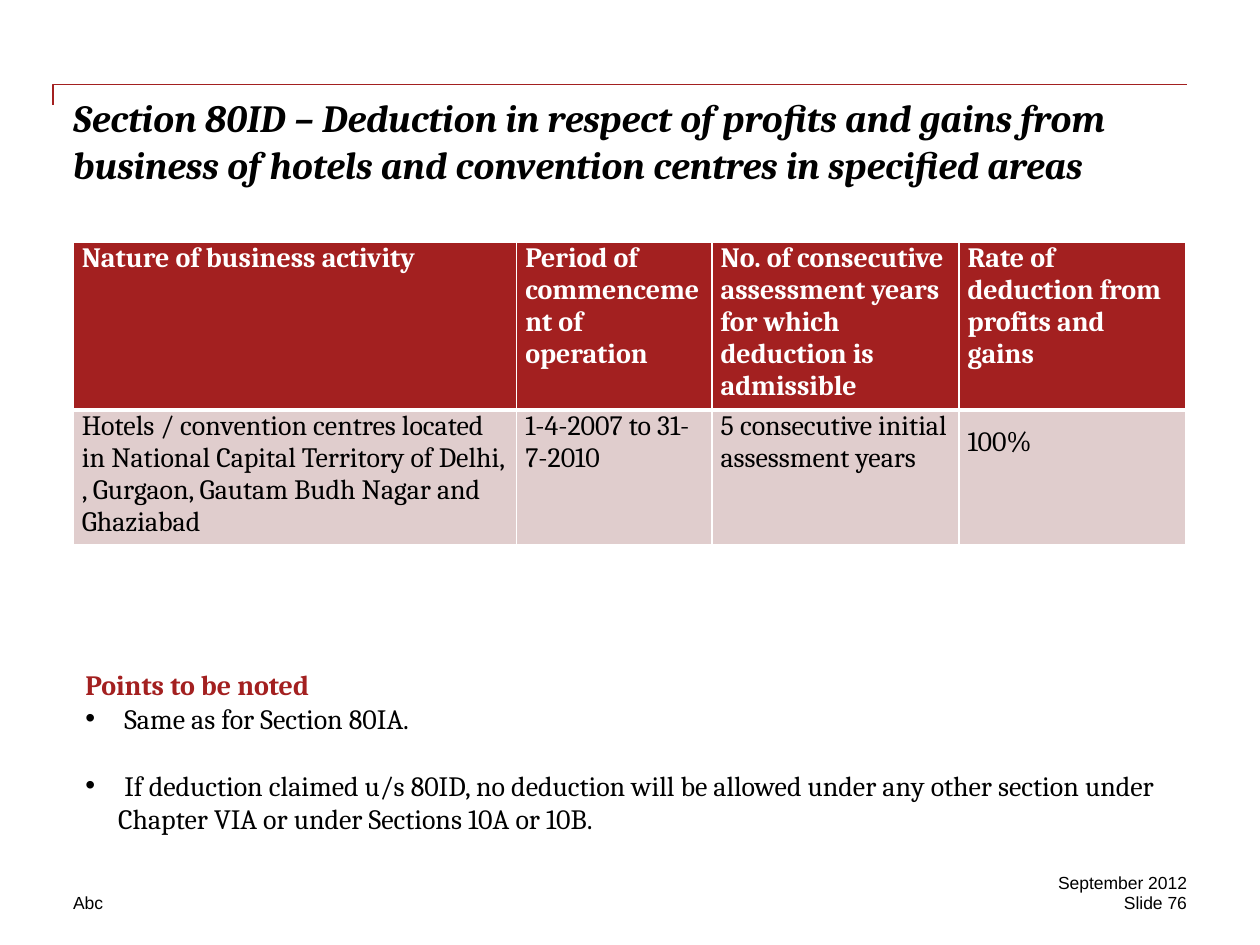
import pptx
import pptx.dml.color
import pptx.enum.text
import pptx.oxml
import pptx.oxml.ns
import pptx.util
from pptx.util import Inches

RED, PINK, BLACK, WHITE = "A32020", "E0CDCD", "000000", "FFFFFF"
RIGHT = pptx.enum.text.PP_ALIGN.RIGHT


def color(value):
    return pptx.dml.color.RGBColor.from_string(value)


def write(paragraph, text, size=16, font="Cambria", fill=BLACK, bold=False,
          italic=False, align=None):
    run = paragraph.add_run()
    run.text = text
    run.font.size = pptx.util.Pt(size)
    run.font.name = font
    run.font.bold = bold
    run.font.italic = italic
    run.font.color.rgb = color(fill)
    if align is not None:
        paragraph.alignment = align


presentation = pptx.Presentation()
presentation.slide_width = Inches(10)
presentation.slide_height = Inches(7.5)
slide = presentation.slides.add_slide(presentation.slide_layouts[6])

# Rule above the title with a short drop at its left end
builder = slide.shapes.build_freeform(Inches(0.42), Inches(0.83))
builder.add_line_segments(
    [(Inches(0.42), Inches(0.67)), (Inches(9.42), Inches(0.67))], close=False)
rule = builder.convert_to_shape()
rule.shadow.inherit = False
rule.fill.background()
rule.line.color.rgb = color(RED)
rule.line.width = pptx.util.Pt(1)

# Title and footer texts
title = ("Section 80ID – Deduction in respect of profits and gains from "
         "business of hotels and convention centres in specified areas")
footer = {"size": 10, "font": "Arial"}
labels = [
    (title, 0.58, 0.75, 8.83, 1, {"size": 22, "bold": True, "italic": True}),
    ("Abc", 0.58, 7.08, 2.83, 0.17, footer),
    ("September 2012", 7.75, 6.92, 1.67, 0.17, {**footer, "align": RIGHT}),
    ("Slide 76", 7.75, 7.08, 1.67, 0.17, {**footer, "align": RIGHT}),
]
for text, left, top, width, height, style in labels:
    box = slide.shapes.add_textbox(
        Inches(left), Inches(top), Inches(width), Inches(height))
    frame = box.text_frame
    frame.word_wrap = True
    frame.margin_left = frame.margin_right = 0
    frame.margin_top = frame.margin_bottom = 0
    write(frame.paragraphs[0], text, **style)

# Deduction table
rows = [
    ["Nature of business activity",
     "Period of commencement of operation",
     "No. of consecutive assessment years for which deduction is admissible",
     "Rate of deduction from profits and gains"],
    ["Hotels / convention centres located in National Capital Territory of "
     "Delhi, , Gurgaon, Gautam Budh Nagar and Ghaziabad",
     "1-4-2007 to 31-7-2010",
     "5 consecutive initial assessment years",
     "100%"],
]
table = slide.shapes.add_table(
    2, 4, Inches(0.58), Inches(1.92), Inches(8.83), Inches(2.29)).table
for column, width in zip(table.columns, [3.52, 1.55, 1.96, 1.8]):
    column.width = Inches(width)
for row, height in zip(table.rows, [1.27, 1.02]):
    row.height = Inches(height)

for row_index, texts in enumerate(rows):
    header = row_index == 0
    for column_index, text in enumerate(texts):
        cell = table.cell(row_index, column_index)
        cell.margin_left = cell.margin_right = Inches(0.07)
        cell.margin_top = cell.margin_bottom = 0
        write(cell.text_frame.paragraphs[0], text,
              fill=WHITE if header else BLACK, bold=header)
        # White borders, with a thick one between header and body
        properties = cell._tc.get_or_add_tcPr()
        for side in ("L", "R", "T", "B"):
            thick = (header and side == "B") or (not header and side == "T")
            properties.append(pptx.oxml.parse_xml(
                f'<a:ln{side} {pptx.oxml.ns.nsdecls("a")} '
                f'w="{pptx.util.Pt(3 if thick else 1)}"><a:solidFill>'
                f'<a:srgbClr val="{WHITE}"/></a:solidFill></a:ln{side}>'))
        cell.fill.solid()
        cell.fill.fore_color.rgb = color(RED if header else PINK)
table.cell(1, 3).text_frame.paragraphs[0].line_spacing = 1.5

# Notes under the table
box = slide.shapes.add_textbox(
    Inches(0.58), Inches(5.25), Inches(8.92), Inches(1.45))
frame = box.text_frame
frame.word_wrap = True
write(frame.paragraphs[0], "Points to be noted", fill=RED, bold=True)
points = [
    (" Same as for Section 80IA.", 0),
    (" If deduction claimed u/s 80ID, no deduction will be allowed under any "
     "other section under Chapter VIA or under Sections 10A or 10B.", 19),
]
for text, gap in points:
    paragraph = frame.add_paragraph()
    paragraph.space_before = pptx.util.Pt(gap)
    write(paragraph, text)
    properties = paragraph._p.get_or_add_pPr()
    properties.set("marL", str(Inches(0.26)))
    properties.set("indent", str(-Inches(0.26)))
    properties.append(pptx.oxml.parse_xml(
        f'<a:buFont {pptx.oxml.ns.nsdecls("a")} typeface="Arial"/>'))
    properties.append(pptx.oxml.parse_xml(
        f'<a:buChar {pptx.oxml.ns.nsdecls("a")} char="•"/>'))

presentation.save("out.pptx")
